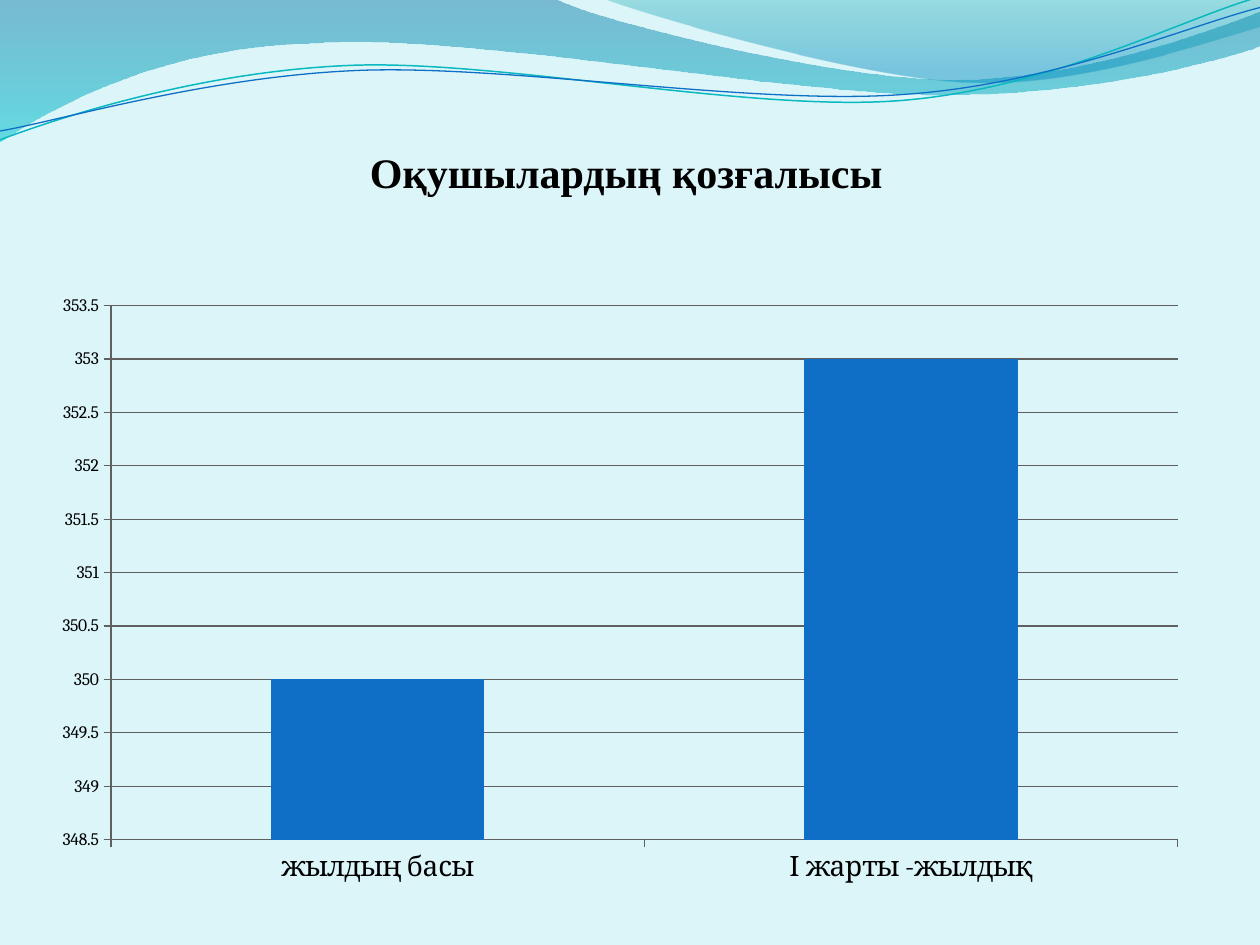
"""Build a slide with a wave banner, a title and a column chart of pupil numbers."""
from dataclasses import dataclass

from pptx import Presentation
from pptx import util as u
from pptx.chart.data import CategoryChartData
from pptx.dml.color import RGBColor
from pptx.enum import chart as charts, text
from pptx.oxml.ns import qn
from pptx.oxml.xmlchemy import OxmlElement

COLORS = {
    "background": "DBF5F9", "ink": "000000", "axis": "606060", "blue": "0F6FC6",
    "teal": "0AB8BF", "deep": "0074A1", "cyan": "00C6CF", "green": "00A1A9", "sky": "008BBF",
}
Point = tuple[float, float]
Segments = tuple[tuple[float, ...], ...]


@dataclass(frozen=True)
class Stop:
    """A gradient stop with opacity in percent."""
    position: float
    color: str
    opacity: int


@dataclass(frozen=True)
class Band:
    """A closed wave; segments of six numbers are curves, of two are lines."""
    start: Point
    segments: Segments
    stops: tuple[Stop, Stop]


@dataclass(frozen=True)
class Strand:
    """An open wave line."""
    start: Point
    segments: Segments
    color: str
    width: float


BANDS = (
    Band((0, 0), (
        (4.4, -0.01), (4.76, 0.17, 6.64, 0.63, 7.58, 0.63), (8.53, 0.63, 9.58, 0.26, 10, 0.09),
        (10.01, 0.36), (9.83, 0.44, 8.7, 0.76, 7.46, 0.75), (6.22, 0.75, 3.82, 0.28, 2.57, 0.34),
        (1.29, 0.36, 0.46, 0.83, -0.01, 1.13), (0, 0)),
        (Stop(0, "deep", 45), Stop(1, "cyan", 55))),
    Band((4.79, -0.01), (
        (5.09, 0.11, 6.82, 0.62, 7.69, 0.65), (8.56, 0.69, 9.61, 0.32, 10, 0.21), (10, 0),
        (4.79, -0.01)),
        (Stop(0, "green", 30), Stop(0.8, "sky", 45))),
)
STRANDS = (
    Strand((0, 1.11), (
        (0.48, 0.93, 1.58, 0.57, 2.77, 0.52), (3.95, 0.47, 5.93, 0.89, 7.13, 0.8),
        (8.33, 0.71, 9.38, 0.15, 9.98, -0.02)), "teal", 0.85),
    Strand((0, 1.04), (
        (0.47, 0.96, 1.64, 0.61, 2.83, 0.56), (4.03, 0.51, 5.97, 0.84, 7.17, 0.75),
        (8.36, 0.67, 9.41, 0.21, 10, 0.06)), "blue", 0.75),
)


def color(name: str) -> RGBColor:
    """Look up a named colour."""
    return RGBColor.from_string(COLORS[name])


def bend(shape, segments: Segments) -> None:
    """Join the three points of each curved segment into one cubic curve."""
    lines = iter(list(shape.element.iter(qn("a:lnTo"))))
    for segment in segments:
        group = [next(lines) for _ in range(len(segment) // 2)]
        if len(group) == 1:
            continue
        curve = OxmlElement("a:cubicBezTo")
        group[0].addprevious(curve)
        for line in group:
            curve.append(line[0])
            line.getparent().remove(line)


def draw_wave(slide, wave: Band | Strand, closed: bool):
    """Draw the outline of a wave without shadow."""
    points = [(u.Inches(x), u.Inches(y)) for segment in wave.segments
              for x, y in zip(segment[::2], segment[1::2])]
    builder = slide.shapes.build_freeform(*map(u.Inches, wave.start))
    builder.add_line_segments(points, close=closed)
    shape = builder.convert_to_shape()
    shape.shadow.inherit = False
    bend(shape, wave.segments)
    return shape


def draw_band(slide, band: Band) -> None:
    """Draw a filled wave with a see-through gradient running downwards."""
    shape = draw_wave(slide, band, closed=True)
    shape.line.fill.background()
    shape.fill.gradient()
    shape.fill.gradient_angle = 270
    for target, stop in zip(shape.fill.gradient_stops, band.stops):
        target.position = stop.position
        target.color.rgb = color(stop.color)
    for node, stop in zip(shape.element.iter(qn("a:gs")), band.stops):
        alpha = OxmlElement("a:alpha")
        alpha.set("val", str(stop.opacity * 1000))
        node[0].append(alpha)


def draw_strand(slide, strand: Strand) -> None:
    """Draw a wave line."""
    shape = draw_wave(slide, strand, closed=False)
    shape.fill.background()
    shape.line.color.rgb = color(strand.color)
    shape.line.width = u.Pt(strand.width)


def style_font(font, *, size: float, name: str, ink: str = "ink", bold: bool = False) -> None:
    """Apply a typeface, size and colour."""
    font.size, font.name, font.bold = u.Pt(size), name, bold
    font.color.rgb = color(ink)


def write(box, content: str, *, align=text.PP_ALIGN.CENTER, **style) -> None:
    """Write one formatted paragraph into a box."""
    para = box.text_frame.paragraphs[0]
    para.alignment = align
    span = para.add_run()
    span.text = content
    style_font(span.font, **style)


def draw_title(slide) -> None:
    """Place the title in front of the waves."""
    box = slide.shapes.title
    box.left, box.top, box.width, box.height = map(u.Inches, (0.47, 0.31, 9, 1.25))
    frame = box.text_frame
    frame.word_wrap = True
    frame.vertical_anchor = text.MSO_ANCHOR.BOTTOM
    frame.margin_left = frame.margin_right = frame.margin_bottom = 0
    frame.margin_top = u.Inches(0.05)
    write(box, "Оқушылардың қозғалысы", size=24, name="Times New Roman", bold=True)
    slide.shapes.element.append(box.element)


def draw_chart(slide) -> None:
    """Add the column chart."""
    data = CategoryChartData()
    data.categories = ["жылдың басы", "І жарты -жылдық"]
    data.add_series("Series 1", (350, 353))
    chart = slide.shapes.add_chart(
        charts.XL_CHART_TYPE.COLUMN_CLUSTERED,
        *map(u.Inches, (0.31, 2.25, 9.22, 4.86)), data).chart
    chart.has_legend = chart.has_title = False
    style_font(chart.font, size=10, name="Cambria")
    plot = chart.plots[0]
    plot.gap_width = 150
    plot.vary_by_categories = False
    fill = plot.series[0].format.fill
    fill.solid()
    fill.fore_color.rgb = color("blue")
    values, categories = chart.value_axis, chart.category_axis
    values.minimum_scale, values.maximum_scale, values.major_unit = 348.5, 353.5, 0.5
    values.has_major_gridlines = True
    for axis, size in ((values, 10), (categories, 16)):
        axis.major_tick_mark = charts.XL_TICK_MARK.OUTSIDE
        style_font(axis.tick_labels.font, size=size, name="Cambria")
    for part in (values, categories, values.major_gridlines):
        part.format.line.color.rgb = color("axis")
        part.format.line.width = u.Pt(0.75)


def main() -> None:
    """Build and save the deck."""
    deck = Presentation()
    deck.slide_width, deck.slide_height = u.Inches(10), u.Inches(7.5)
    slide = deck.slides.add_slide(deck.slide_layouts.get_by_name("Title Only"))
    slide.background.fill.solid()
    slide.background.fill.fore_color.rgb = color("background")
    for band in BANDS:
        draw_band(slide, band)
    for strand in STRANDS:
        draw_strand(slide, strand)
    draw_title(slide)
    draw_chart(slide)
    deck.save("out.pptx")


if __name__ == "__main__":
    main()
